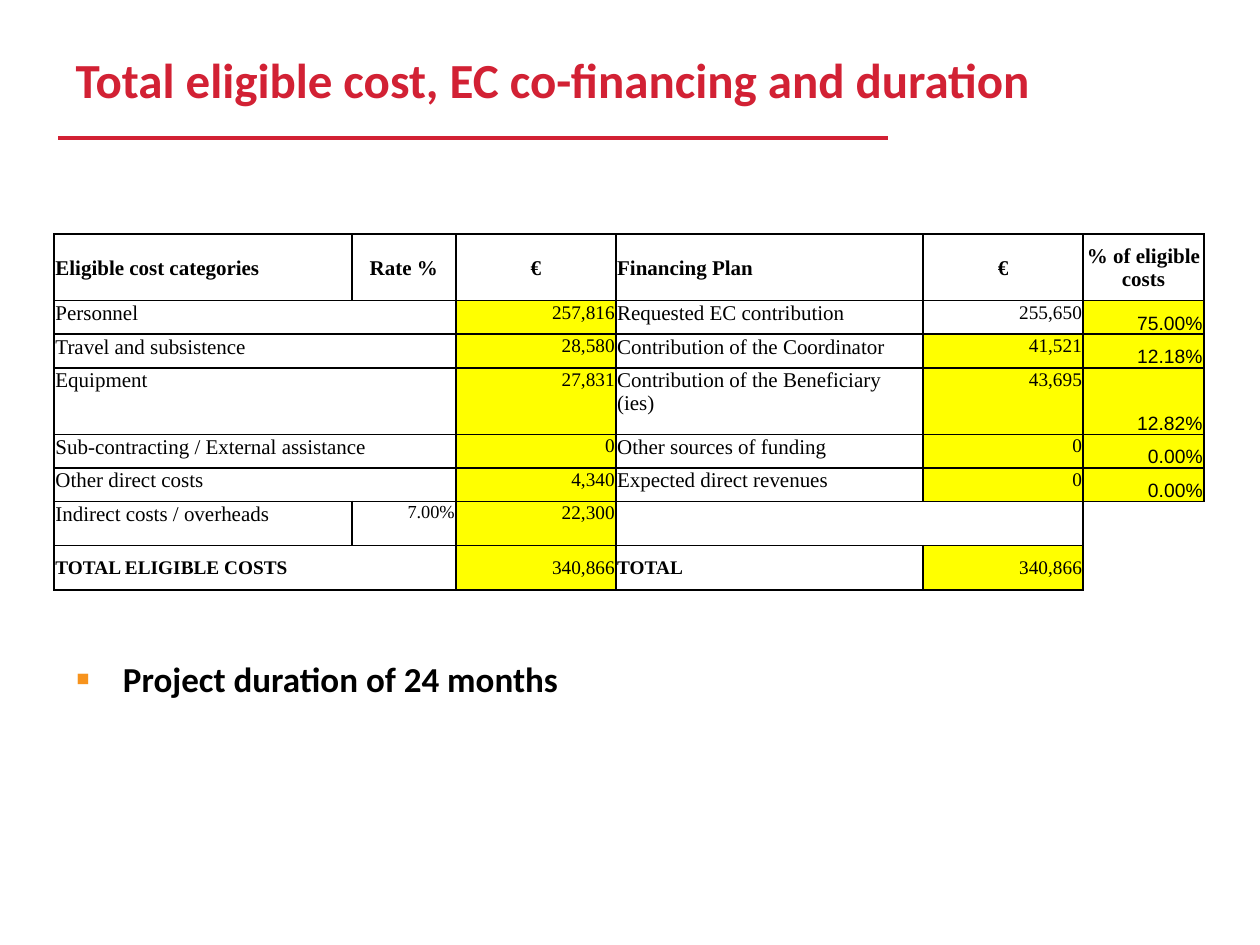
import pptx
import pptx.util
import pptx.dml.color
import pptx.enum.shapes
import pptx.enum.text
import pptx.oxml.ns
from lxml import etree

Pt = pptx.util.Pt
ALIGN = pptx.enum.text.PP_ALIGN
ANCHOR = pptx.enum.text.MSO_ANCHOR
COLORS = {"red": "D22134", "black": "000000", "yellow": "FFFF00", "orange": "F7931D"}

COLUMN_WIDTHS = [170, 59.5, 91.5, 175.5, 91.5, 69]
ROW_HEIGHTS = [38, 19.2, 19.2, 38, 19.2, 19.2, 25.3, 25.3]
# None marks a cell that is covered by the one to its left
COST_ROWS = [
    ["Eligible cost categories", "Rate %", "€", "Financing Plan", "€", "% of eligible costs"],
    ["Personnel", None, "257,816", "Requested EC contribution", "255,650", "75.00%"],
    ["Travel and subsistence", None, "28,580", "Contribution of the Coordinator", "41,521", "12.18%"],
    ["Equipment", None, "27,831", "Contribution of the Beneficiary (ies)", "43,695", "12.82%"],
    ["Sub-contracting / External assistance", None, "0", "Other sources of funding", "0", "0.00%"],
    ["Other direct costs", None, "4,340", "Expected direct revenues", "0", "0.00%"],
    ["Indirect costs / overheads", "7.00%", "22,300", "", None, ""],
    ["TOTAL ELIGIBLE COSTS", None, "340,866", "TOTAL", "340,866", ""],
]
TOTAL_ROW = len(COST_ROWS) - 1
PERCENT_COLUMN = len(COLUMN_WIDTHS) - 1
LABEL_COLUMNS = (0, 3)
FIRST_OPEN_ROW = 6  # from here down the percent column lies outside the frame


def rgb(name):
    return pptx.dml.color.RGBColor.from_string(COLORS[name])


def add_xml(parent, tag, **attributes):
    return etree.SubElement(parent, pptx.oxml.ns.qn(tag), attributes)


def set_values(target, values):
    for key, value in values.items():
        setattr(target, key, value)


def cell_format(row, column):
    """Return font values, alignment, anchor and fill of a cost table cell."""
    header, total = row == 0, row == TOTAL_ROW
    label = column in LABEL_COLUMNS
    font = {"name": "Times New Roman", "size": Pt(11), "bold": header or (total and label)}
    if header or (label and not total):
        font["size"] = Pt(12)
    align = ALIGN.LEFT if label else ALIGN.CENTER if header else ALIGN.RIGHT
    anchor = ANCHOR.MIDDLE if header or total else ANCHOR.TOP
    if column == PERCENT_COLUMN and not header:
        font["name"], anchor = "Arial", ANCHOR.BOTTOM
    if column == 1 and not header:
        font["size"] = Pt(10.5)
    shaded = not (header or label or column == 1 or (row, column) == (1, 4))
    if column == PERCENT_COLUMN and row >= FIRST_OPEN_ROW:
        shaded = False
    return font, align, anchor, "yellow" if shaded else None


def cell_borders(row, column, span):
    """Return the width in points of each side; 0 is no line."""
    def upright(edge):
        step = row >= FIRST_OPEN_ROW and edge == PERCENT_COLUMN
        return 1.5 if step or edge in (0, len(COLUMN_WIDTHS)) else 1

    def level(edge):
        return 1.5 if edge in (0, len(COST_ROWS)) else 1

    if column == PERCENT_COLUMN and row >= FIRST_OPEN_ROW:
        return {"L": 1.5, "R": 0, "T": 1 if row == FIRST_OPEN_ROW else 0, "B": 0}
    return {"L": upright(column), "R": upright(column + span), "T": level(row), "B": level(row + 1)}


class SlideBuilder:
    heading_font = {"name": "Calibri", "bold": True}
    cell_margins = {"margin_left": Pt(0.7), "margin_right": Pt(0.7), "margin_top": Pt(0.7), "margin_bottom": 0}

    def __init__(self, slide):
        self.slide = slide

    def placeholder(self, index, box, text, size, color, anchor):
        holder = self.slide.placeholders[index]
        set_values(holder, dict(zip(("left", "top", "width", "height"), map(Pt, box))))
        holder.text_frame.vertical_anchor = anchor
        paragraph = holder.text_frame.paragraphs[0]
        paragraph.alignment = ALIGN.LEFT
        paragraph.space_before = Pt(0)
        run = paragraph.add_run()
        run.text = text
        set_values(run.font, {**self.heading_font, "size": Pt(size)})
        run.font.color.rgb = rgb(color)
        return paragraph

    def bullet(self, paragraph, indent):
        properties = paragraph._p.get_or_add_pPr()
        properties.set("marL", str(Pt(indent)))
        properties.set("indent", str(-Pt(indent)))
        add_xml(add_xml(properties, "a:buClr"), "a:srgbClr", val=COLORS["orange"])
        add_xml(properties, "a:buSzPct", val="120000")
        add_xml(properties, "a:buFont", typeface="Arial")
        add_xml(properties, "a:buChar", char="▪")

    def rule(self, left, right, top):
        line = self.slide.shapes.add_connector(
            pptx.enum.shapes.MSO_CONNECTOR.STRAIGHT, Pt(left), Pt(top), Pt(right), Pt(top))
        line.line.color.rgb = rgb("red")
        line.line.width = Pt(2.25)
        add_xml(line._element.spPr, "a:effectLst")

    def border(self, cell, widths):
        properties = cell._tc.get_or_add_tcPr()
        for side, width in widths.items():
            line = add_xml(properties, f"a:ln{side}", w=str(Pt(width)))
            if width:
                add_xml(add_xml(line, "a:solidFill"), "a:srgbClr", val=COLORS["black"])
            else:
                add_xml(line, "a:noFill")

    def cell(self, cell, text, row, column, span):
        font, align, anchor, fill = cell_format(row, column)
        set_values(cell, {**self.cell_margins, "vertical_anchor": anchor})
        self.border(cell, cell_borders(row, column, span))
        if fill:
            cell.fill.solid()
            cell.fill.fore_color.rgb = rgb(fill)
        else:
            cell.fill.background()
        paragraph = cell.text_frame.paragraphs[0]
        paragraph.alignment = align
        if text:
            run = paragraph.add_run()
            run.text = text
            set_values(run.font, font)
            run.font.color.rgb = rgb("black")

    def cost_table(self, left, top):
        table = self.slide.shapes.add_table(
            len(COST_ROWS), len(COLUMN_WIDTHS), Pt(left), Pt(top),
            Pt(sum(COLUMN_WIDTHS)), Pt(sum(ROW_HEIGHTS))).table
        set_values(table, {"first_row": False, "horz_banding": False})
        for column, width in zip(table.columns, COLUMN_WIDTHS):
            column.width = Pt(width)
        for row, (texts, height) in enumerate(zip(COST_ROWS, ROW_HEIGHTS)):
            table.rows[row].height = Pt(height)
            for column, text in enumerate(texts):
                cell = table.cell(row, column)
                if text is None:
                    table.cell(row, column - 1).merge(cell)
                span = 2 if texts[column + 1:column + 2] == [None] else 1
                self.cell(cell, text, row, column, span)


def main():
    presentation = pptx.Presentation()
    presentation.slide_width, presentation.slide_height = Pt(720), Pt(540)
    builder = SlideBuilder(presentation.slides.add_slide(presentation.slide_layouts[1]))
    builder.rule(33.3, 507.5, 78.8)
    builder.placeholder(0, (36, 0, 648, 90), "Total eligible cost, EC co-financing and duration",
                        28, "red", ANCHOR.MIDDLE)
    builder.cost_table(31, 133.8)
    duration = builder.placeholder(1, (36, 372, 648, 40), "Project duration of 24 months",
                                   20, "black", ANCHOR.TOP)
    builder.bullet(duration, 27)
    presentation.save("out.pptx")


if __name__ == "__main__":
    main()
